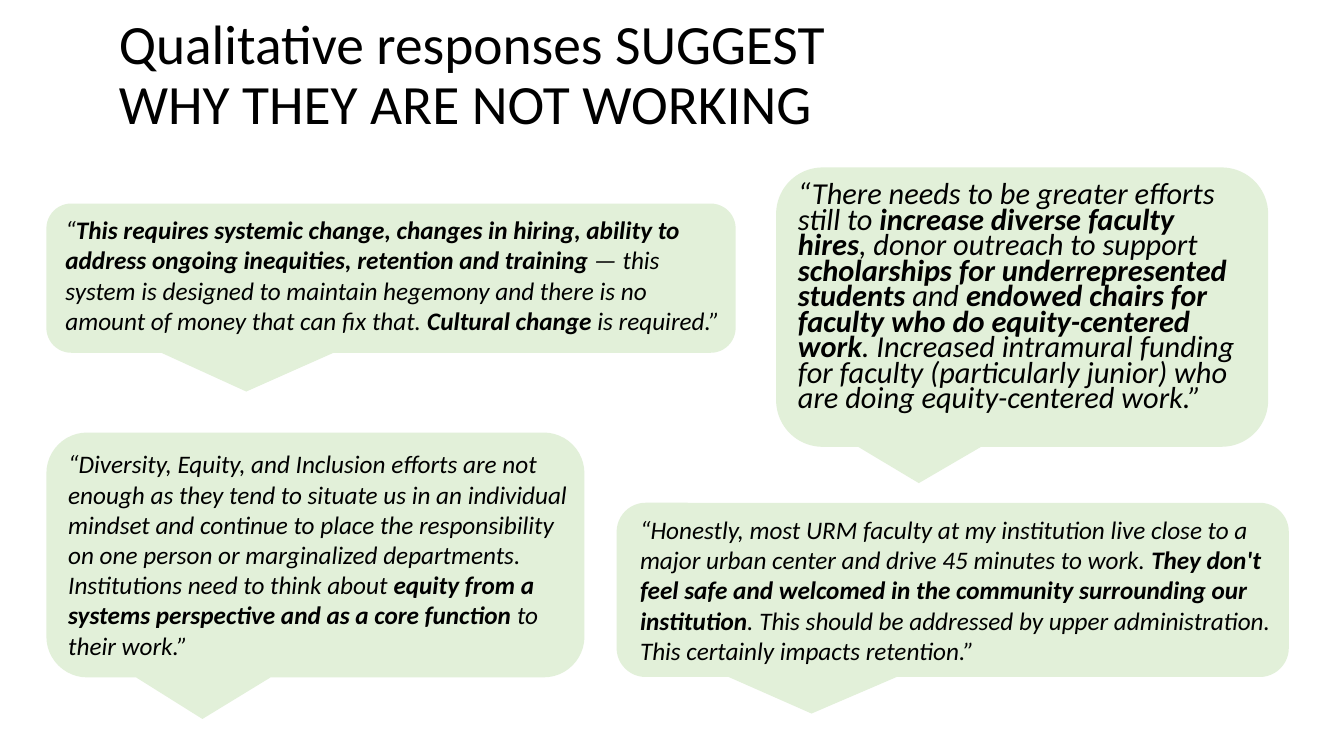
from dataclasses import dataclass

from pptx import Presentation
from pptx import util as u
from pptx.dml.color import RGBColor
from pptx.enum import shapes, text


@dataclass(frozen=True)
class Theme:
    font: str = "Calibri"
    ink: RGBColor = RGBColor(0, 0, 0)
    bubble: RGBColor = RGBColor(0xE2, 0xF0, 0xD9)
    title_size: float = 39.6
    quote_size: float = 18
    large_quote_size: float = 21.7


THEME = Theme()
SLIDE_SIZE = (33.87, 19.05)
TITLE = "Qualitative responses SUGGEST \vWHY THEY ARE NOT WORKING"
TITLE_BOX = (2.74, 0.28, 29.18, 3.3)

# Boxes are left, top, width, height in cm; ** switches bold on and off.
QUOTES = [
    dict(
        bubble=(15.54, 12.67, 16.94, 4.39), tail=(-0.21, 0.71),
        box=(15.88, 12.83, 16.94, 4.11), size=THEME.quote_size, spacing=1.0,
        words="“Honestly, most URM faculty at my institution live close to a major urban "
              "center and drive 45 minutes to work. **They don't feel safe and welcomed in "
              "the community surrounding our institution**. This should be addressed by "
              "upper administration. This certainly impacts retention.”"),
    dict(
        bubble=(19.56, 4.22, 12.4, 7.04), tail=(-0.21, 0.63),
        box=(19.86, 4.52, 11.86, 7.21), size=THEME.large_quote_size, spacing=0.7,
        words="“There needs to be greater efforts still to **increase diverse faculty "
              "hires**, donor outreach to support **scholarships for underrepresented "
              "students **and **endowed chairs for faculty who do equity-centered work**. "
              "Increased intramural funding for faculty (particularly junior) who are "
              "doing equity-centered work.”"),
    dict(
        bubble=(1.17, 10.9, 13.56, 6.17), tail=(-0.21, 0.67),
        box=(1.47, 11.18, 13.26, 6.4), size=THEME.quote_size, spacing=1.0,
        words="“Diversity, Equity, and Inclusion efforts are not enough as they tend to "
              "situate us in an individual mindset and continue to place the "
              "responsibility on one person or marginalized departments. Institutions "
              "need to think about **equity from a systems perspective and as a core "
              "function **to their work.”"),
    dict(
        bubble=(1.17, 5.13, 17.37, 3.76), tail=(-0.21, 0.76),
        box=(1.4, 5.28, 17.17, 3.35), size=THEME.quote_size, spacing=1.0,
        words="“**This requires systemic change, changes in hiring, ability to address "
              "ongoing inequities, retention and training **— this system is designed to "
              "maintain hegemony and there is no amount of money that can fix that. "
              "**Cultural change **is required.”"),
]


def cm(box):
    return [u.Cm(length) for length in box]


def style(font, size):
    font.name, font.size = THEME.font, u.Pt(size)
    font.color.rgb = THEME.ink


def add_title(s):
    sp = s.shapes.title
    sp.left, sp.top, sp.width, sp.height = cm(TITLE_BOX)
    tf = sp.text_frame
    tf.vertical_anchor = text.MSO_ANCHOR.MIDDLE
    p = tf.paragraphs[0]
    p.text = TITLE
    p.alignment, p.line_spacing = text.PP_ALIGN.LEFT, 0.9
    for r in p.runs:
        style(r.font, THEME.title_size)


def add_bubble(s, box, tail):
    sp = s.shapes.add_shape(shapes.MSO_SHAPE.ROUNDED_RECTANGULAR_CALLOUT, *cm(box))
    sp.adjustments[0], sp.adjustments[1] = tail
    sp.shadow.inherit = False
    sp.fill.solid()
    sp.fill.fore_color.rgb = THEME.bubble
    sp.line.fill.background()


def add_quote(s, box, words, size, spacing):
    tf = s.shapes.add_textbox(*cm(box)).text_frame
    tf.word_wrap = True
    p = tf.paragraphs[0]
    p.line_spacing = spacing
    for i, part in enumerate(words.split("**")):
        r = p.add_run()
        r.text = part
        style(r.font, size)
        r.font.italic, r.font.bold = True, i % 2 == 1


def main():
    prs = Presentation()
    prs.slide_width, prs.slide_height = cm(SLIDE_SIZE)
    s = prs.slides.add_slide(prs.slide_layouts[5])
    add_title(s)
    for quote in QUOTES:
        add_bubble(s, quote["bubble"], quote["tail"])
        add_quote(s, quote["box"], quote["words"], quote["size"], quote["spacing"])
    prs.save("out.pptx")


if __name__ == "__main__":
    main()
